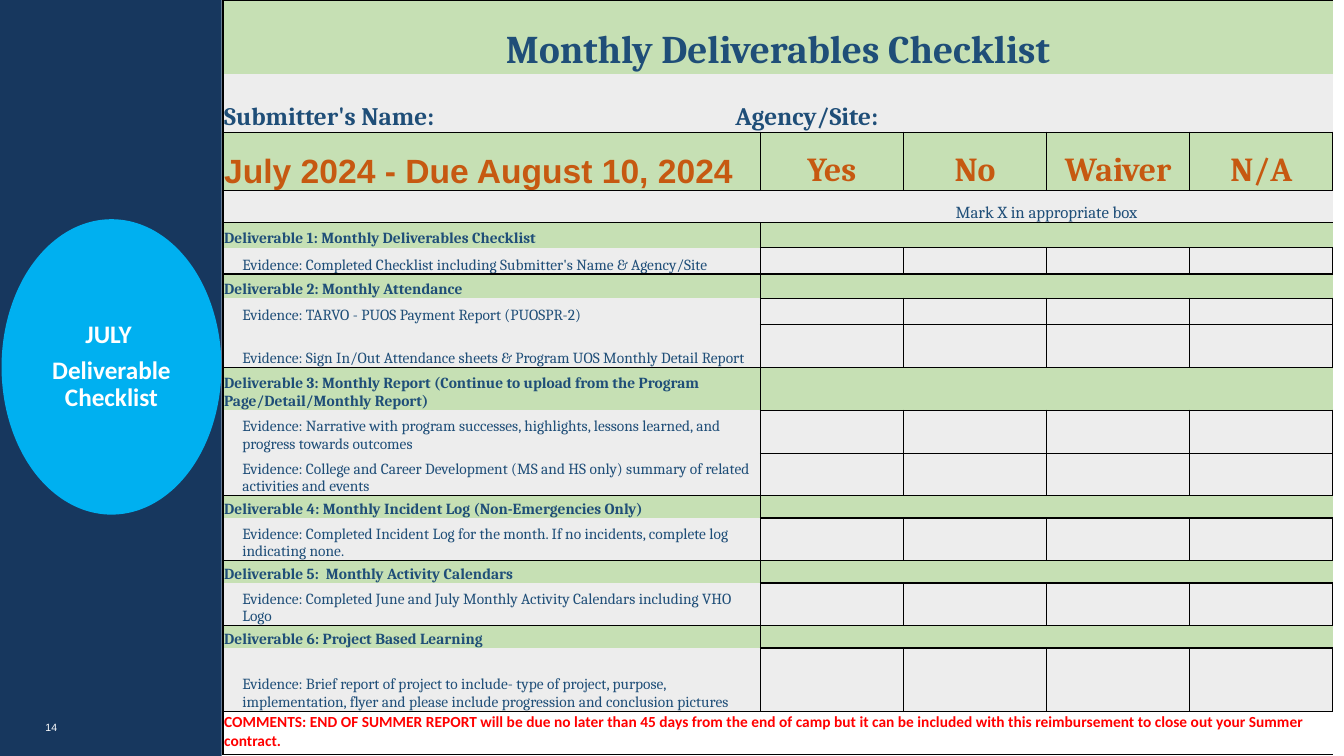
from dataclasses import dataclass

from lxml import etree
from pptx import Presentation
from pptx import util as u
from pptx.dml.color import RGBColor
from pptx.enum import shapes, text
from pptx.oxml import ns


@dataclass(frozen=True)
class Theme:
    navy: str = "17375E"
    sky: str = "00B0F0"
    green: str = "C6E0B4"
    grey: str = "EDEDED"
    white: str = "FFFFFF"
    black: str = "000000"
    ink: str = "1F4E78"
    rust: str = "C65911"
    red: str = "FF0000"
    serif: str = "Cambria"
    sans: str = "Arial"
    plain: str = "Calibri"
    title: float = 28
    month: float = 24
    label: float = 18
    hint: float = 12
    body: float = 11
    folio: float = 7.5
    thick: float = 1
    thin: float = 0.5


T = Theme()


@dataclass(frozen=True)
class Box:
    """A table cell: first column, columns spanned, words, and left, top, right, bottom line widths."""
    col: int
    span: int
    words: str
    edge: tuple
    fill: str = ""
    size: float = T.body
    color: str = T.ink
    face: str = T.serif
    bold: bool = True
    mid: bool = False
    pad: float = 0.08
    low: bool = True


@dataclass(frozen=True)
class Row:
    high: float
    cells: list


@dataclass(frozen=True)
class Task:
    """A deliverable, with its evidence lines; heights are shares of the slide."""
    high: float
    head: str
    proofs: list


WIDE, HIGH = u.Inches(13.33), u.Inches(7.5)
LEFT = 16.6
COLS = [38.03, 1.95] + [10.65] * 4
MARKS = ["Yes", "No", "Waiver", "N/A"]
TASKS = [
    Task(3.33, "Monthly Deliverables Checklist", [
        (3.47, "Completed Checklist including Submitter's Name & Agency/Site")]),
    Task(3.2, "Monthly Attendance", [
        (3.47, "TARVO - PUOS Payment Report (PUOSPR-2)"),
        (5.67, "Sign In/Out Attendance sheets & Program UOS Monthly Detail Report")]),
    Task(5.67, "Monthly Report (Continue to upload from the Program Page/Detail/Monthly Report)", [
        (5.67, "Narrative with program successes, highlights, lessons learned, and "
               "progress towards outcomes"),
        (5.67, "College and Career Development (MS and HS only) summary of related "
               "activities and events")]),
    Task(2.93, "Monthly Incident Log (Non-Emergencies Only)", [
        (5.67, "Completed Incident Log for the month. If no incidents, complete log "
               "indicating none.")]),
    Task(2.93, " Monthly Activity Calendars", [
        (5.67, "Completed June and July Monthly Activity Calendars including VHO Logo")]),
    Task(2.93, "Project Based Learning", [
        (8.4, "Brief report of project to include- type of project, purpose, "
              "implementation, flyer and please include progression and conclusion pictures")]),
]


def across(share: float) -> int:
    return round(WIDE * share / 100)


def down(share: float) -> int:
    return round(HIGH * share / 100)


def paint(fill, color: str) -> None:
    fill.solid()
    fill.fore_color.rgb = RGBColor.from_string(color)


def write(frame, words: str, *, size: float, color: str, face: str, bold: bool = False,
          mid: bool = False, space: float = 1, after: float = 0) -> None:
    frame.word_wrap = True
    for i, line in enumerate(words.split("\n")):
        para = frame.add_paragraph() if i else frame.paragraphs[0]
        para.alignment = text.PP_ALIGN.CENTER if mid else text.PP_ALIGN.LEFT
        para.line_spacing = space
        para.space_after = u.Pt(after)
        run = para.add_run()
        run.text = line
        run.font.size, run.font.name, run.font.bold = u.Pt(size), face, bold
        run.font.color.rgb = RGBColor.from_string(color)


def shape(slide, kind, left: float, top: float, wide: float, high: float, color: str):
    item = slide.shapes.add_shape(kind, across(left), down(top), across(wide), down(high))
    item.shadow.inherit = False
    paint(item.fill, color)
    item.line.fill.background()
    return item


def rule(cell, edge: tuple) -> None:
    """Set the cell's left, top, right and bottom lines; zero means no line."""
    props = cell._tc.get_or_add_tcPr()
    for i, (side, width) in enumerate(zip(("lnL", "lnR", "lnT", "lnB"),
                                          (edge[0], edge[2], edge[1], edge[3]))):
        line = etree.Element(ns.qn(f"a:{side}"), w=str(int(u.Pt(width))))
        if width:
            fill = etree.SubElement(line, ns.qn("a:solidFill"))
            etree.SubElement(fill, ns.qn("a:srgbClr"), val=T.black)
        else:
            etree.SubElement(line, ns.qn("a:noFill"))
        props.insert(i, line)


def place(table, row: int, box: Box) -> None:
    last = box.col + box.span - 1
    if box.span > 1:
        table.cell(row, box.col).merge(table.cell(row, last))
    for col in range(box.col, last + 1):
        cell = table.cell(row, col)
        cell.margin_left = across(box.pad)
        cell.margin_right, cell.margin_top, cell.margin_bottom = across(0.08), down(0.13), 0
        cell.vertical_anchor = text.MSO_ANCHOR.BOTTOM if box.low else text.MSO_ANCHOR.TOP
        if box.fill:
            paint(cell.fill, box.fill)
        else:
            cell.fill.background()
        left, top, right, base = box.edge
        rule(cell, (left if col == box.col else 0, top, right if col == last else 0, base))
        if col == box.col and box.words:
            write(cell.text_frame, box.words, size=box.size, color=box.color, face=box.face,
                  bold=box.bold, mid=box.mid)
        else:
            para = cell.text_frame.paragraphs[0]._p
            etree.SubElement(para, ns.qn("a:endParaRPr"), sz=str(int(T.body * 100)))


def marks(words: list, top: float, base: float, **form) -> list:
    """Four answer cells, thick outside and thin between."""
    return [Box(2 + i, 1, word, (T.thin if i else T.thick, top,
                                 T.thick if i == 3 else T.thin, base), mid=True, **form)
            for i, word in enumerate(words)]


def plan() -> list:
    k, n = T.thick, T.thin
    rust = dict(fill=T.green, size=T.month, color=T.rust)
    name = dict(fill=T.grey, size=T.label)
    rows = [
        Row(9.73, [Box(0, 6, "Monthly Deliverables Checklist", (k, k, k, 0), T.green,
                       T.title, mid=True)]),
        Row(7.73, [Box(0, 1, "Submitter's Name: ", (k, 0, 0, n), **name),
                   Box(1, 5, "Agency/Site: ", (0, 0, k, n), **name)]),
        Row(7.73, [Box(0, 2, "July 2024 - Due August 10, 2024", (k, n, k, k), face=T.sans, **rust)]
            + marks(MARKS, n, k, **rust)),
        Row(4.27, [Box(0, 2, "", (k, k, 0, k), T.grey),
                   Box(2, 4, "Mark X in appropriate box", (0, k, k, k), T.grey, T.hint,
                       bold=False, mid=True)]),
    ]
    for i, task in enumerate(TASKS, 1):
        rows.append(Row(task.high, [
            Box(0, 2, f"Deliverable {i}: {task.head}", (k, k, k, 0), T.green),
            Box(2, 4, "", (k, k, k, k), T.green)]))
        for j, (high, proof) in enumerate(task.proofs, 1):
            end = j == len(task.proofs)
            label = Box(0, 2, f"Evidence: {proof}", (k, 0, k, k if end else 0), T.grey,
                        bold=False, pad=1.43)
            rows.append(Row(high, [label] + marks([""] * 4, k if j == 1 else n,
                                                  k if end else n, fill=T.grey)))
    note = ("COMMENTS: END OF SUMMER REPORT will be due no later than 45 days from the end of camp "
            "but it can be included with this reimbursement to close out your Summer contract.")
    rows.append(Row(5.67, [Box(0, 6, note, (k, k, k, k), color=T.red, face=T.plain, low=False)]))
    return rows


def side(slide) -> None:
    """Draw the navy band with its oval and page number."""
    shape(slide, shapes.MSO_SHAPE.RECTANGLE, 0, 0, 16.5, 100, T.navy)
    oval = shape(slide, shapes.MSO_SHAPE.OVAL, 0.83, 30.27, 14.93, 36.53, T.sky)
    paint(oval.line.fill, T.sky)
    oval.line.width = u.Pt(13.75)
    oval.text_frame.vertical_anchor = text.MSO_ANCHOR.MIDDLE
    write(oval.text_frame, "JULY \nDeliverable Checklist", size=T.label, color=T.white,
          face=T.plain, bold=True, mid=True, space=0.9, after=6)
    page = slide.shapes.add_textbox(across(3.08), down(95.33), across(1.65), down(1.87))
    frame = page.text_frame
    frame.margin_left = across(0.3)
    frame.margin_right = frame.margin_top = frame.margin_bottom = 0
    write(frame, "14", size=T.folio, color=T.white, face=T.sans)


def main() -> None:
    deck = Presentation()
    deck.slide_width, deck.slide_height = WIDE, HIGH
    slide = deck.slides.add_slide(deck.slide_layouts[6])
    side(slide)
    rows = plan()
    table = slide.shapes.add_table(len(rows), len(COLS), across(LEFT), 0,
                                   across(sum(COLS)), HIGH).table
    table.first_row = table.horz_banding = False
    for col, wide in zip(table.columns, COLS):
        col.width = across(wide)
    for i, row in enumerate(rows):
        table.rows[i].height = down(row.high)
        for box in row.cells:
            place(table, i, box)
    deck.save("out.pptx")


if __name__ == "__main__":
    main()
